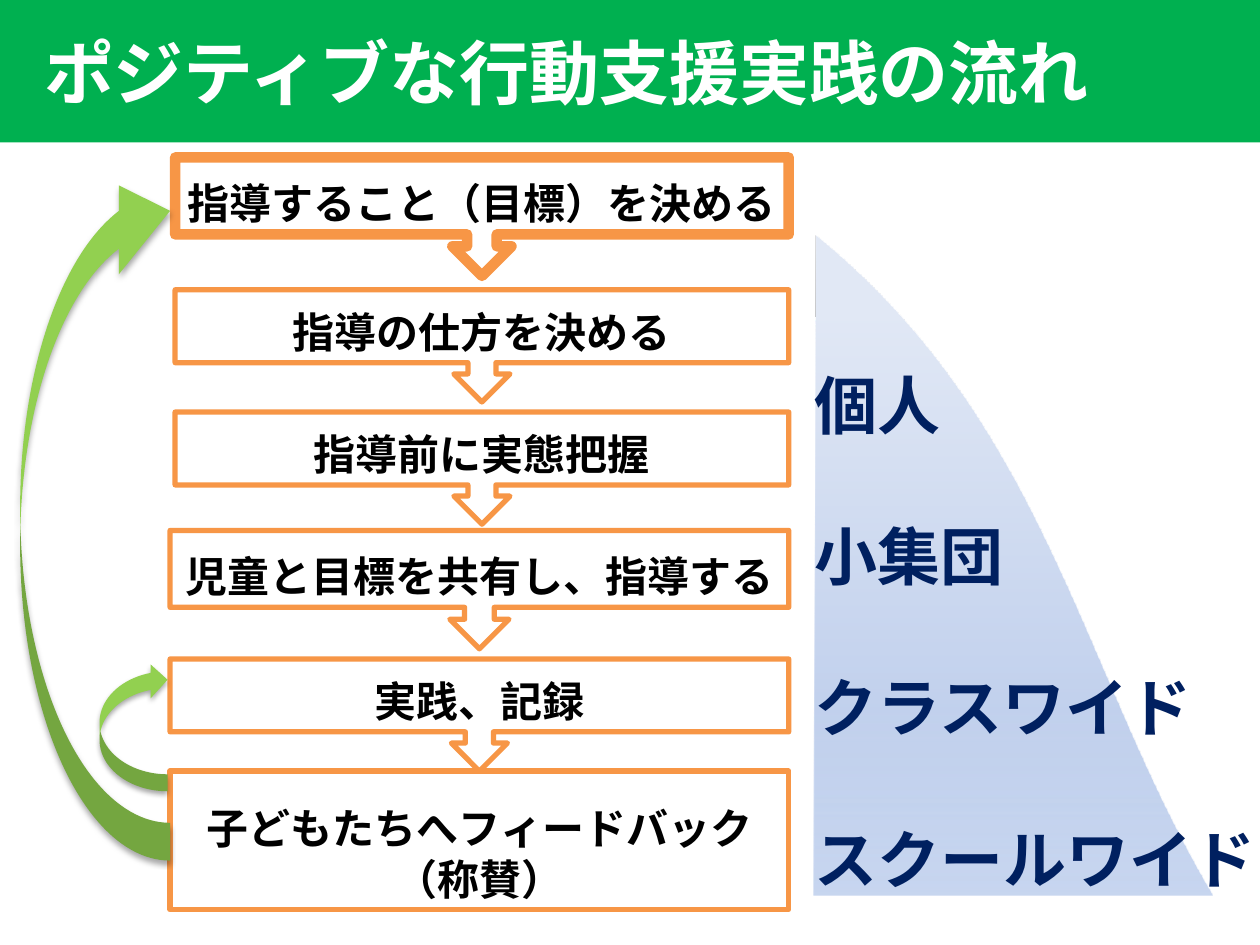
from lxml import etree
from pptx import Presentation
from pptx.dml.color import RGBColor
from pptx.enum.shapes import MSO_SHAPE as SHAPE
from pptx.enum.text import MSO_ANCHOR as ANCHOR, PP_ALIGN as ALIGN
from pptx.oxml import parse_xml
from pptx.oxml.ns import nsdecls, qn
from pptx.util import Inches, Pt

FONT = "Noto Sans CJK JP"
TITLE = "ポジティブな行動支援実践の流れ"

# Steps: text, left, top, width, height, line width
STEPS = [
    ("指導すること（目標）を決める", 1.39, 1.25, 4.87, 0.94, 6),
    ("指導の仕方を決める", 1.39, 2.3, 4.87, 0.89, 3),
    ("指導前に実態把握", 1.39, 3.27, 4.87, 0.89, 3),
    ("児童と目標を共有し、指導する", 1.35, 4.21, 4.91, 0.94, 3),
    ("実践、記録", 1.35, 5.23, 4.91, 0.89, 3),
    ("子どもたちへフィードバック\n（称賛）", 1.35, 6.12, 4.91, 1.1, 3),
]
LEVELS = ["個人", "小集団", "クラスワイド", "スクールワイド"]

# Return arrows: left, top, width, height, adjustments
LONG_RETURN = (-2, 3.48, 5.51, 1.19, (0.252, 0.593, 0.342))
SHORT_RETURN = (0.55, 5.5, 1.02, 0.54, ())

# Hill: bottom left corner, then the curved edge from the peak to the foot
HILL_CORNER = (6.46, 7.11)
HILL_EDGE = [(6.48, 1.87), (8.31, 3.36), (8.58, 5.36), (9.62, 7.11)]
HILL_STOPS = [(0, "B2C6EA", 71), (30, "C2D1ED", 100), (88, "E1E8F5", 100)]


def color(value):
    return RGBColor.from_string(value)


def write(box, text, size, ink, align=ALIGN.LEFT, spacing=None):
    box.text_frame.text = text
    for para in box.text_frame.paragraphs:
        para.alignment = align
        para.line_spacing = spacing
        for span in para.runs:
            span.font.size = Pt(size)
            span.font.bold = True
            span.font.color.rgb = color(ink)
            span.font.name = FONT
            east_asian = etree.SubElement(span.font._element, qn("a:ea"))
            east_asian.set("typeface", FONT)


def add_shape(page, kind, left, top, width, height, fill, line=None, weight=0):
    shape = page.shapes.add_shape(
        kind, Inches(left), Inches(top), Inches(width), Inches(height))
    shape.shadow.inherit = False
    shape.fill.solid()
    shape.fill.fore_color.rgb = color(fill)
    if line:
        shape.line.color.rgb = color(line)
        shape.line.width = Pt(weight)
    else:
        shape.line.fill.background()
    return shape


def bezier(points, t):
    weights = ((1 - t) ** 3, 3 * t * (1 - t) ** 2, 3 * t * t * (1 - t), t ** 3)
    return tuple(Inches(sum(w * p[axis] for w, p in zip(weights, points)))
                 for axis in (0, 1))


def add_hill(page):
    corner = [Inches(value) for value in HILL_CORNER]
    builder = page.shapes.build_freeform(*corner)
    builder.add_line_segments([bezier(HILL_EDGE, i / 40) for i in range(41)])
    hill = builder.convert_to_shape()
    hill.shadow.inherit = False
    hill.line.fill.background()
    stops = "".join(
        f'<a:gs pos="{pos * 1000}"><a:srgbClr val="{value}">'
        f'<a:alpha val="{alpha * 1000}"/></a:srgbClr></a:gs>'
        for pos, value, alpha in HILL_STOPS)
    gradient = parse_xml(
        f'<a:gradFill {nsdecls("a")} rotWithShape="1"><a:gsLst>{stops}</a:gsLst>'
        '<a:lin ang="16200000" scaled="0"/></a:gradFill>')
    hill._element.spPr.find(qn("a:custGeom")).addnext(gradient)


def add_return_arrow(page, left, top, width, height, adjustments):
    arrow = add_shape(page, SHAPE.CURVED_DOWN_ARROW, left, top, width, height, "92D050")
    arrow.rotation = 270
    for index, value in enumerate(adjustments):
        arrow.adjustments[index] = value
    effects = arrow._element.spPr.find(qn("a:effectLst"))
    effects.append(parse_xml(
        f'<a:outerShdw {nsdecls("a")} blurRad="{Pt(3.1)}" dist="{Pt(1.8)}" '
        'dir="5400000" rotWithShape="0"><a:srgbClr val="000000">'
        '<a:alpha val="35000"/></a:srgbClr></a:outerShdw>'))


def main():
    deck = Presentation()
    deck.slide_width, deck.slide_height = Inches(10), Inches(7.5)
    page = deck.slides.add_slide(deck.slide_layouts[6])

    add_hill(page)

    # Steps: callouts pointing down, the last one a plain box
    for text, *place, weight in STEPS:
        last = text == STEPS[-1][0]
        kind = SHAPE.RECTANGLE if last else SHAPE.DOWN_ARROW_CALLOUT
        step = add_shape(page, kind, *place, "FFFFFF", "F79646", weight)
        frame = step.text_frame
        frame.vertical_anchor = ANCHOR.BOTTOM
        frame.margin_left = frame.margin_right = Inches(0.05)
        write(step, text, 24, "000000", ALIGN.CENTER)

    add_return_arrow(page, *LONG_RETURN)

    # Levels over the hill
    levels = page.shapes.add_textbox(
        Inches(6.37), Inches(2.26), Inches(3.7), Inches(4.95))
    levels.text_frame.word_wrap = False
    write(levels, "\n".join(LEVELS), 36, "002060", spacing=2.0)

    add_return_arrow(page, *SHORT_RETURN)

    # Title band
    band = add_shape(page, SHAPE.RECTANGLE, 0, 0, 10, 1.13, "00B050")
    band.text_frame.vertical_anchor = ANCHOR.MIDDLE
    band.text_frame.margin_left = Inches(0.35)
    write(band, TITLE, 40, "FFFFFF")

    deck.save("out.pptx")


if __name__ == "__main__":
    main()
